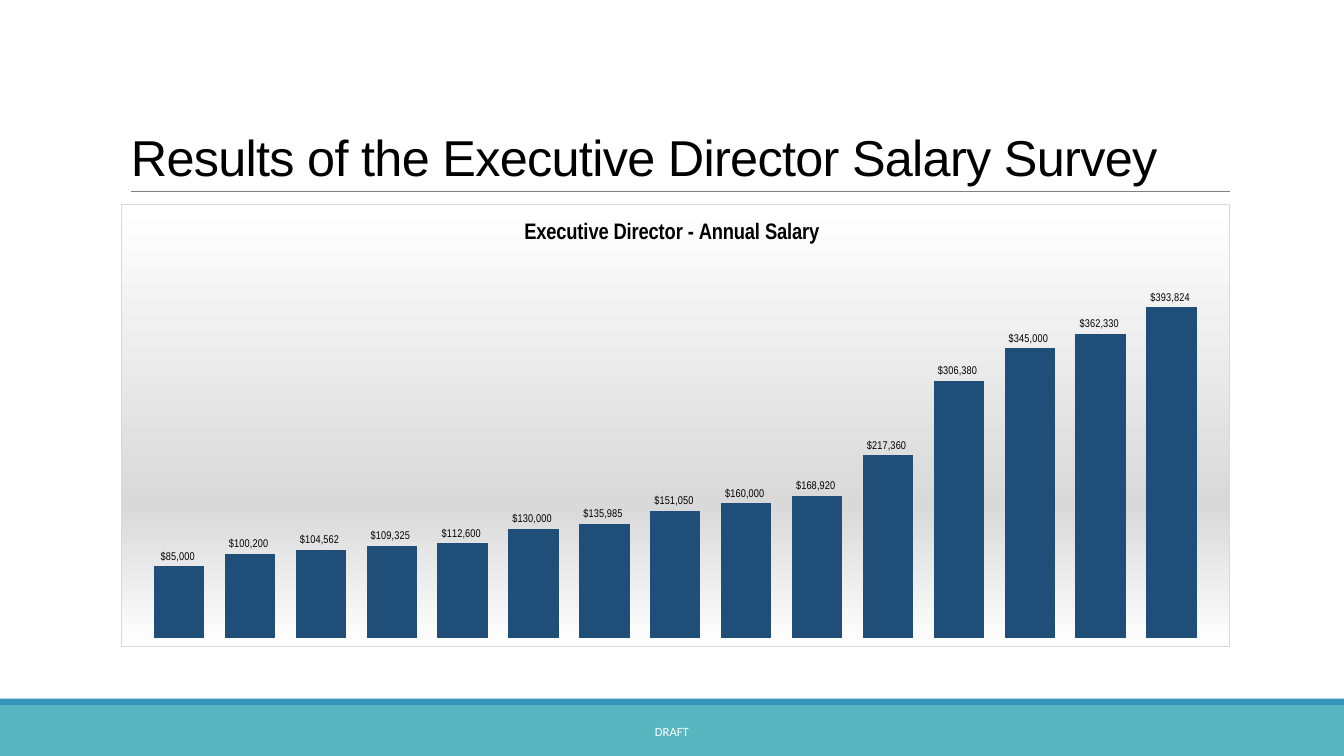
from lxml import etree
from pptx import Presentation
from pptx.chart.data import CategoryChartData
from pptx.dml.color import RGBColor
from pptx.enum.chart import XL_CHART_TYPE as ChartType, XL_LABEL_POSITION as LabelPosition
from pptx.enum.shapes import MSO_CONNECTOR as Connector, MSO_SHAPE as Shape
from pptx.enum.text import MSO_ANCHOR as Anchor, PP_ALIGN as Align
from pptx.oxml import parse_xml
from pptx.oxml.ns import nsdecls, qn
from pptx.util import Pt

# Content
TITLE = "Results of the Executive Director Salary Survey"
CHART_TITLE = "Executive Director - Annual Salary"
FOOTER = "DRAFT"
SALARIES = [85000, 100200, 104562, 109325, 112600, 130000, 135985, 151050,
            160000, 168920, 217360, 306380, 345000, 362330, 393824]
SALARY_FORMAT = '"$"#,##0_);[Red]\\("$"#,##0\\)'

# Colours
BLACK = RGBColor(0x00, 0x00, 0x00)
WHITE = RGBColor(0xFF, 0xFF, 0xFF)
GREY = RGBColor(0x80, 0x80, 0x80)
SILVER = RGBColor(0xD9, 0xD9, 0xD9)
NAVY = RGBColor(0x1F, 0x4E, 0x79)
BLUE = RGBColor(0x34, 0x94, 0xBA)
TEAL = RGBColor(0x58, 0xB6, 0xC0)

# Geometry in points: left, top, width, height
WIDTH, HEIGHT = 960, 540
BANDS = [((0, 504, WIDTH, 36), TEAL), ((0, 499, WIDTH, 5), BLUE)]
TITLE_BOX = (86.4, 22.3, 792, 114.5)
CHART_BOX = (86.4, 145.4, 792, 316.8)
FOOTER_BOX = (290.2, 508.3, 379.4, 28.8)
RULE_LEFT, RULE_RIGHT, RULE_TOP = 93.6, 878.4, 136.8


def points(box):
    return [Pt(length) for length in box]


def add_text(slide, box, text, anchor, size, font_name, color):
    text_box = slide.shapes.add_textbox(*points(box))
    frame = text_box.text_frame
    frame.word_wrap = True
    frame.vertical_anchor = anchor
    paragraph = frame.paragraphs[0]
    paragraph.text = text
    set_font(paragraph.font, size, font_name, color)
    return paragraph


def set_font(font, size, name, color, bold=False):
    font.size = Pt(size)
    font.name = name
    font.bold = bold
    font.color.rgb = color


def set_layout(parent, index, **fractions):
    for old_layout in parent.findall(qn("c:layout")):
        parent.remove(old_layout)
    layout = etree.Element(qn("c:layout"))
    manual = etree.SubElement(layout, qn("c:manualLayout"))
    if "w" in fractions:
        etree.SubElement(manual, qn("c:layoutTarget"), val="inner")
    for side in "xy":
        etree.SubElement(manual, qn(f"c:{side}Mode"), val="edge")
    for name, value in fractions.items():
        etree.SubElement(manual, qn(f"c:{name}"), val=str(value))
    parent.insert(index, layout)


presentation = Presentation()
presentation.slide_width, presentation.slide_height = Pt(WIDTH), Pt(HEIGHT)
slide = presentation.slides.add_slide(presentation.slide_layouts[6])

# Footer bands
for box, color in BANDS:
    band = slide.shapes.add_shape(Shape.RECTANGLE, *points(box))
    band.shadow.inherit = False
    band.fill.solid()
    band.fill.fore_color.rgb = color
    band.line.fill.background()

# Title and the rule below it
rule = slide.shapes.add_connector(
    Connector.STRAIGHT, *points((RULE_LEFT, RULE_TOP, RULE_RIGHT, RULE_TOP)))
rule.line.color.rgb = GREY
rule.line.width = Pt(0.5)
etree.SubElement(rule._element.spPr, qn("a:effectLst"))

title = add_text(slide, TITLE_BOX, TITLE, Anchor.BOTTOM, 36, "Arial", BLACK)
title.line_spacing = 0.85
title.runs[0]._r.get_or_add_rPr().set("spc", "-50")

# Salary chart
data = CategoryChartData(number_format=SALARY_FORMAT)
data.categories = [str(number) for number in range(1, len(SALARIES) + 1)]
data.add_series("Series 1", SALARIES)
chart = slide.shapes.add_chart(
    ChartType.COLUMN_CLUSTERED, *points(CHART_BOX), data).chart
set_font(chart.font, 10, "Calibri", BLACK)
chart.has_legend = False
chart.has_title = True
heading = chart.chart_title.text_frame.paragraphs[0]
heading.text = CHART_TITLE
set_font(heading.font, 16, "Arial Narrow", BLACK, bold=True)
chart.chart_title.include_in_layout = False

chart.category_axis.visible = False
chart.value_axis.visible = False
chart.value_axis.has_major_gridlines = False
chart.value_axis.minimum_scale = 0
chart.value_axis.maximum_scale = 450000

plot = chart.plots[0]
plot.gap_width = 41
plot.vary_by_categories = False
series = plot.series[0]
series.format.fill.solid()
series.format.fill.fore_color.rgb = NAVY
labels = series.data_labels
labels.show_value = True
labels.position = LabelPosition.OUTSIDE_END
labels.number_format = SALARY_FORMAT
labels.number_format_is_linked = False
set_font(labels.font, 8, "Arial Narrow", BLACK)

# Chart placement and gradient background
chart_root = chart._chartSpace.find(qn("c:chart"))
set_layout(chart_root.find(qn("c:title")), 1, x=0.36, y=0.03)
set_layout(chart_root.find(qn("c:plotArea")), 0, x=0.02, y=0.127, w=0.96, h=0.853)
stops = "".join(
    f'<a:gs pos="{percent * 1000}"><a:srgbClr val="{color}"/></a:gs>'
    for percent, color in [(0, WHITE), (68, SILVER), (100, WHITE)])
chart_root.addnext(parse_xml(
    f'<c:spPr {nsdecls("c", "a")}>'
    f'<a:gradFill><a:gsLst>{stops}</a:gsLst><a:lin ang="5400000" scaled="0"/></a:gradFill>'
    f'<a:ln w="{Pt(0.75)}"><a:solidFill><a:srgbClr val="{SILVER}"/></a:solidFill></a:ln>'
    '</c:spPr>'))

# Footer text
footer = add_text(slide, FOOTER_BOX, FOOTER, Anchor.MIDDLE, 9, "Calibri", WHITE)
footer.alignment = Align.CENTER

presentation.save("out.pptx")
